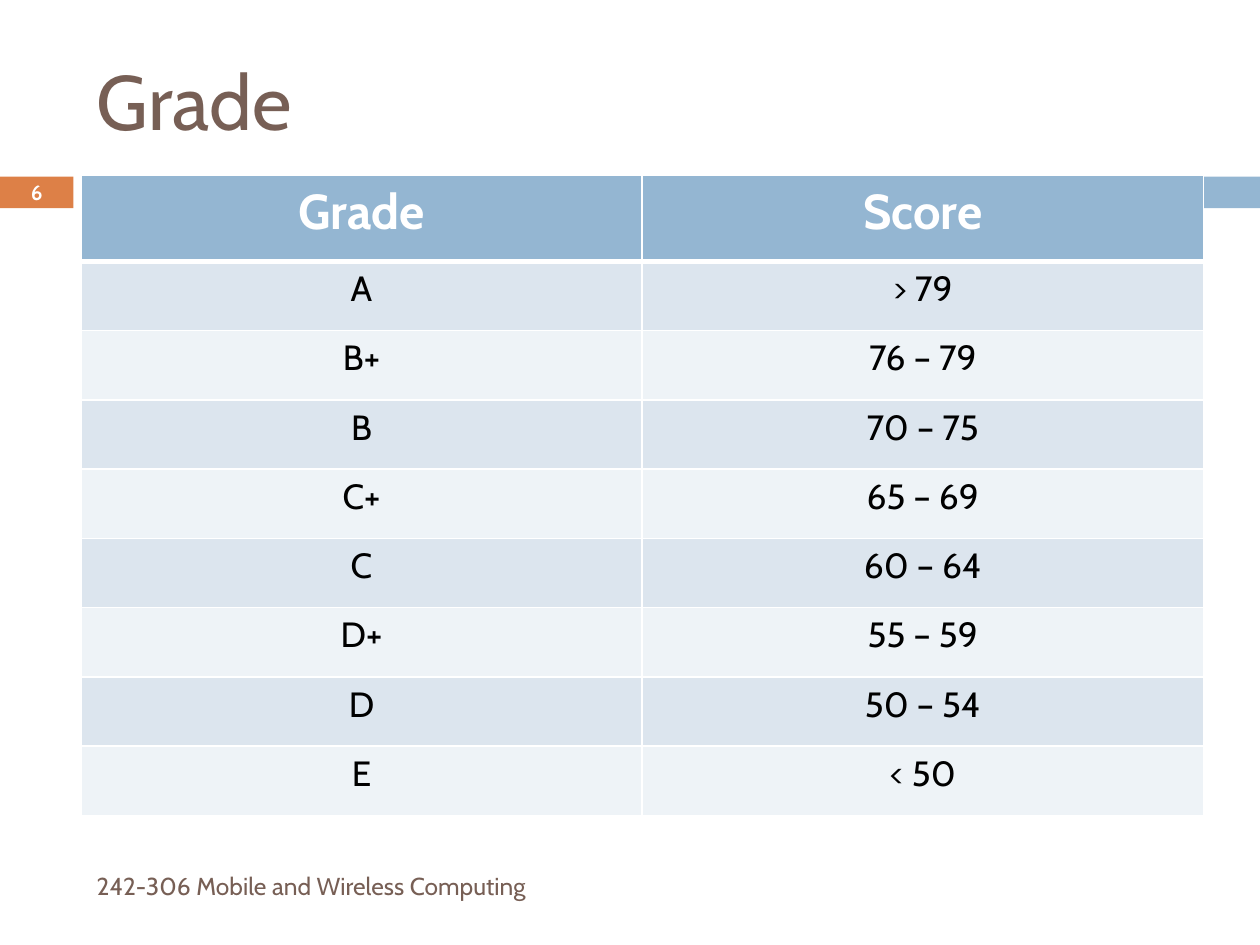
import dataclasses

import pptx
import pptx.dml.color
import pptx.enum.shapes
import pptx.enum.text
import pptx.oxml
import pptx.oxml.ns
import pptx.util

Cm = pptx.util.Cm
ALIGN = pptx.enum.text.PP_ALIGN
MIDDLE = pptx.enum.text.MSO_ANCHOR.MIDDLE


@dataclasses.dataclass(frozen=True)
class Theme:
    font: str = "Cabin"
    brown: str = "775F55"
    orange: str = "DD8047"
    blue: str = "94B6D2"
    bands: tuple = ("DCE5EE", "EEF3F7")
    white: str = "FFFFFF"
    black: str = "000000"
    title_size: float = 44
    header_size: float = 28
    body_size: float = 20
    footer_size: float = 14
    number_size: float = 11.9


THEME = Theme()

GRADES = [
    ("Grade", "Score"),
    ("A", "> 79"),
    ("B+", "76 – 79"),
    ("B", "70 – 75"),
    ("C+", "65 – 69"),
    ("C", "60 – 64"),
    ("D+", "55 – 59"),
    ("D", "50 – 54"),
    ("E", "< 50"),
]


def rgb(color):
    return pptx.dml.color.RGBColor.from_string(color)


def write(tf, text, size, color, bold=False, align=ALIGN.LEFT):
    p = tf.paragraphs[0]
    p.alignment = align
    r = p.add_run()
    r.text = text
    r.font.name = THEME.font
    r.font.size = pptx.util.Pt(size)
    r.font.bold = bold
    r.font.color.rgb = rgb(color)


def add_bar(slide, left, top, width, height, color):
    sp = slide.shapes.add_shape(
        pptx.enum.shapes.MSO_SHAPE.RECTANGLE, left, top, width, height)
    sp.shadow.inherit = False
    sp.fill.solid()
    sp.fill.fore_color.rgb = rgb(color)
    sp.line.fill.background()
    return sp


def add_title(slide, left, top, width, height, text):
    sp = slide.shapes.title
    sp.left, sp.top, sp.width, sp.height = left, top, width, height
    sp.text_frame.vertical_anchor = MIDDLE
    write(sp.text_frame, text, THEME.title_size, THEME.brown)


def add_number_band(slide, left, top, width, height, number):
    """Orange tab with the slide number, and the blue bar to its right."""
    tab, gap = Cm(1.48), Cm(0.18)
    sp = add_bar(slide, left, top, tab, height, THEME.orange)
    tf = sp.text_frame
    tf.vertical_anchor = MIDDLE
    tf.margin_left = tf.margin_right = tf.margin_top = tf.margin_bottom = 0
    write(tf, number, THEME.number_size, THEME.white, bold=True,
          align=ALIGN.CENTER)
    add_bar(slide, left + tab + gap, top, width - tab - gap, height,
            THEME.blue)


def add_footer(slide, left, top, width, height, text):
    tf = slide.shapes.add_textbox(left, top, width, height).text_frame
    tf.word_wrap = True
    tf.vertical_anchor = MIDDLE
    write(tf, text, THEME.footer_size, THEME.brown)


def set_borders(cell, **widths):
    """Give white borders; widths in points, keyed L, R, T, B in that order."""
    tc_pr = cell._tc.get_or_add_tcPr()
    for i, (side, width) in enumerate(widths.items()):
        tc_pr.insert(i, pptx.oxml.parse_xml(
            f'<a:ln{side} {pptx.oxml.ns.nsdecls("a")}'
            f' w="{pptx.util.Pt(width)}"><a:solidFill>'
            f'<a:srgbClr val="{THEME.white}"/></a:solidFill></a:ln{side}>'))


def add_grade_table(slide, left, top, width, height, rows):
    header_height = Cm(1.73)
    row_height = (height - header_height) // (len(rows) - 1)
    table = slide.shapes.add_table(
        len(rows), len(rows[0]), left, top, width, height).table
    for i, row in enumerate(rows):
        header = i == 0
        table.rows[i].height = header_height if header else row_height
        fill = THEME.blue if header else THEME.bands[(i - 1) % 2]
        for j, text in enumerate(row):
            cell = table.cell(i, j)
            cell.fill.solid()
            cell.fill.fore_color.rgb = rgb(fill)
            set_borders(cell, L=1, R=1, T=3 if i == 1 else 1,
                        B=3 if header else 1)
            write(cell.text_frame, text,
                  THEME.header_size if header else THEME.body_size,
                  THEME.white if header else THEME.black,
                  bold=header, align=ALIGN.CENTER)


def main():
    prs = pptx.Presentation()
    prs.slide_width, prs.slide_height = Cm(25.4), Cm(19.05)
    slide = prs.slides.add_slide(prs.slide_layouts.get_by_name("Title Only"))
    add_number_band(slide, 0, Cm(3.56), prs.slide_width, Cm(0.64), "6")
    add_title(slide, Cm(1.7), Cm(0.64), Cm(22.66), Cm(2.74), "Grade")
    add_footer(slide, Cm(1.7), Cm(17.35), Cm(15.06), Cm(1.02),
               "242-306 Mobile and Wireless Computing")
    add_grade_table(slide, Cm(1.63), Cm(3.54), Cm(22.63), Cm(12.9), GRADES)
    prs.save("out.pptx")


if __name__ == "__main__":
    main()
